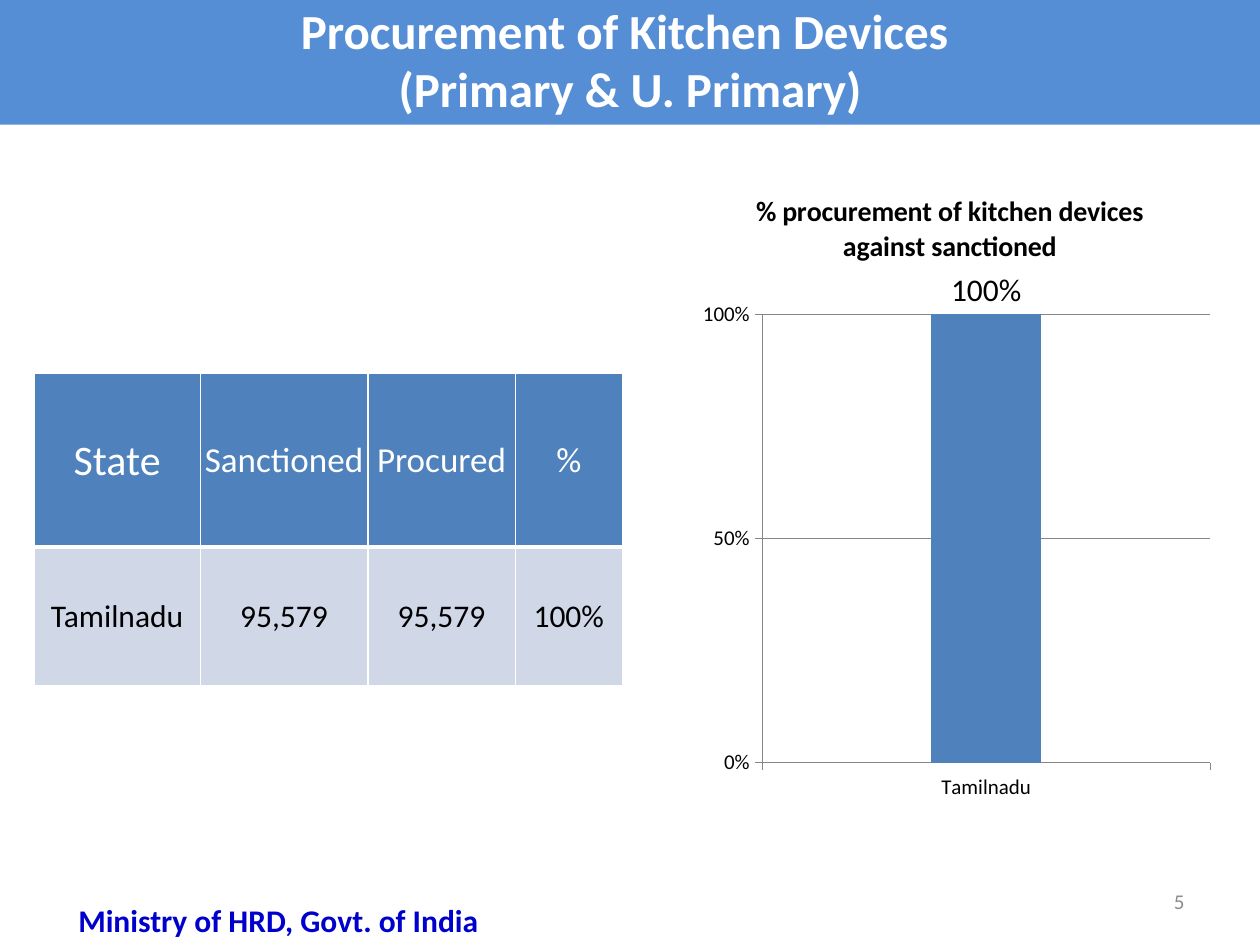
"""Build the kitchen devices procurement slide: banner, table, column chart and footer."""
from lxml import etree
from pptx import Presentation
from pptx import util as u
from pptx.chart.data import CategoryChartData
from pptx.dml.color import RGBColor
from pptx.enum import chart as ch, text
from pptx.oxml import parse_xml
from pptx.oxml.ns import nsdecls, qn

COLORS = {k: RGBColor.from_string(v) for k, v in {
    "banner": "558ED5", "accent": "4F81BD", "band": "D0D8E8", "white": "FFFFFF",
    "black": "000000", "axis": "868686", "number": "8C8C8C", "ministry": "0000CC"}.items()}
FONT = "Calibri"
CENTER, MIDDLE = text.PP_ALIGN.CENTER, text.MSO_ANCHOR.MIDDLE

deck = Presentation()
deck.slide_width, deck.slide_height = u.Inches(10), u.Inches(7.5)
W, H = deck.slide_width, deck.slide_height
slide = deck.slides.add_slide(deck.slide_layouts[5])


def share(left, top, width, height):
    return int(left * W), int(top * H), int(width * W), int(height * H)


def style(font, size, color, bold=False):
    font.name, font.size, font.bold = FONT, u.Pt(size), bold
    font.color.rgb = COLORS[color]


banner = slide.shapes.title
banner.left, banner.top, banner.width, banner.height = share(0, -0.032, 1, 0.164)
banner.fill.solid()
banner.fill.fore_color.rgb = COLORS["banner"]
heading = banner.text_frame
heading.text = "Procurement of Kitchen Devices \n(Primary & U. Primary)"
heading.vertical_anchor = MIDDLE
heading.auto_size = text.MSO_AUTO_SIZE.NONE
for line, spacing in zip(heading.paragraphs, (1.4, 1)):
    line.alignment, line.line_spacing = CENTER, spacing
    style(line.font, 28, "white", True)

rows = [("State", "Sanctioned", "Procured", "%"),
        ("Tamilnadu", "95,579", "95,579", "100%")]
devices = slide.shapes.add_table(2, 4, *share(0.027, 0.395, 0.467, 0.331)).table
for column, width in zip(devices.columns, (1.32, 1.33, 1.17, 0.85)):
    column.width = u.Inches(width)
for row, height in zip(devices.rows, (1.38, 1.1)):
    row.height = u.Inches(height)
for r, values in enumerate(rows):
    for c, value in enumerate(values):
        cell = devices.cell(r, c)
        cell.text = value
        cell.vertical_anchor = MIDDLE
        cell.margin_left = cell.margin_right = cell.margin_top = u.Inches(0.01)
        cell.margin_bottom = 0
        cell.fill.solid()
        cell.fill.fore_color.rgb = COLORS["band" if r else "accent"]
        entry = cell.text_frame.paragraphs[0]
        entry.alignment = CENTER
        size = 18 if r else 20 if c else 24
        style(entry.font, size, "black" if r else "white")
        edges = {"lnL": 1, "lnR": 1, "lnT": 3 if r else 1, "lnB": 1 if r else 3}
        for place, (edge, points) in enumerate(edges.items()):
            cell._tc.tcPr.insert(place, parse_xml(
                f'<a:{edge} {nsdecls("a")} w="{u.Pt(points)}"><a:solidFill>'
                f'<a:srgbClr val="{COLORS["white"]}"/></a:solidFill></a:{edge}>'))

data = CategoryChartData(number_format="0%")
data.categories = ["Tamilnadu"]
data.add_series("Series 1", [1])
procurement = slide.shapes.add_chart(
    ch.XL_CHART_TYPE.COLUMN_CLUSTERED, *share(0.547, 0.177, 0.414, 0.708), data).chart
style(procurement.font, 18, "black")
procurement.has_legend = False
procurement.has_title = True
procurement.chart_title.include_in_layout = False
caption = procurement.chart_title.text_frame
caption.text = "% procurement of kitchen devices against sanctioned"
style(caption.paragraphs[0].font, 16, "black", True)

percent, states = procurement.value_axis, procurement.category_axis
percent.minimum_scale, percent.maximum_scale, percent.major_unit = 0, 1, 0.5
percent.tick_labels.number_format = "0%"
percent.tick_labels.number_format_is_linked = False
for axis in (percent, states):
    axis.major_tick_mark = ch.XL_TICK_MARK.CROSS if axis is states else ch.XL_TICK_MARK.OUTSIDE
    axis.format.line.color.rgb = COLORS["axis"]
    axis.format.line.width = u.Pt(0.75)
    style(axis.tick_labels.font, 12, "black")
for axis in (percent, states):
    axis.major_tick_mark = ch.XL_TICK_MARK.OUTSIDE
percent.major_gridlines.format.line.color.rgb = COLORS["axis"]
percent.major_gridlines.format.line.width = u.Pt(0.75)

columns = procurement.plots[0]
columns.gap_width, columns.vary_by_categories = 306, False
columns.series[0].format.fill.solid()
columns.series[0].format.fill.fore_color.rgb = COLORS["accent"]
columns.has_data_labels = True
labels = columns.data_labels
labels.show_value = True
labels.number_format, labels.number_format_is_linked = "0%", False
labels.position = ch.XL_LABEL_POSITION.OUTSIDE_END
style(labels.font, 18, "black")

plot_area = procurement._chartSpace.chart.plotArea
for old in plot_area.findall(qn("c:layout")):
    plot_area.remove(old)
layout = etree.Element(qn("c:layout"))
manual = etree.SubElement(layout, qn("c:manualLayout"))
for tag, value in (("layoutTarget", "inner"), ("xMode", "edge"), ("yMode", "edge"),
                   ("x", "0.14"), ("y", "0.22"), ("w", "0.86"), ("h", "0.67")):
    etree.SubElement(manual, qn(f"c:{tag}")).set("val", value)
plot_area.insert(0, layout)

footers = [
    ("5", (0.717, 0.927, 0.233, 0.053), text.PP_ALIGN.RIGHT, MIDDLE, 12, "number", False),
    ("Ministry of HRD, Govt. of India", (0.025, 0.947, 0.392, 0.053), CENTER,
     text.MSO_ANCHOR.TOP, 18, "ministry", True)]
for words, place, alignment, anchor, size, color, bold in footers:
    footer = slide.shapes.add_textbox(*share(*place)).text_frame
    footer.word_wrap, footer.vertical_anchor = True, anchor
    footer.text = words
    footer.paragraphs[0].alignment = alignment
    style(footer.paragraphs[0].font, size, color, bold)

deck.save("out.pptx")
